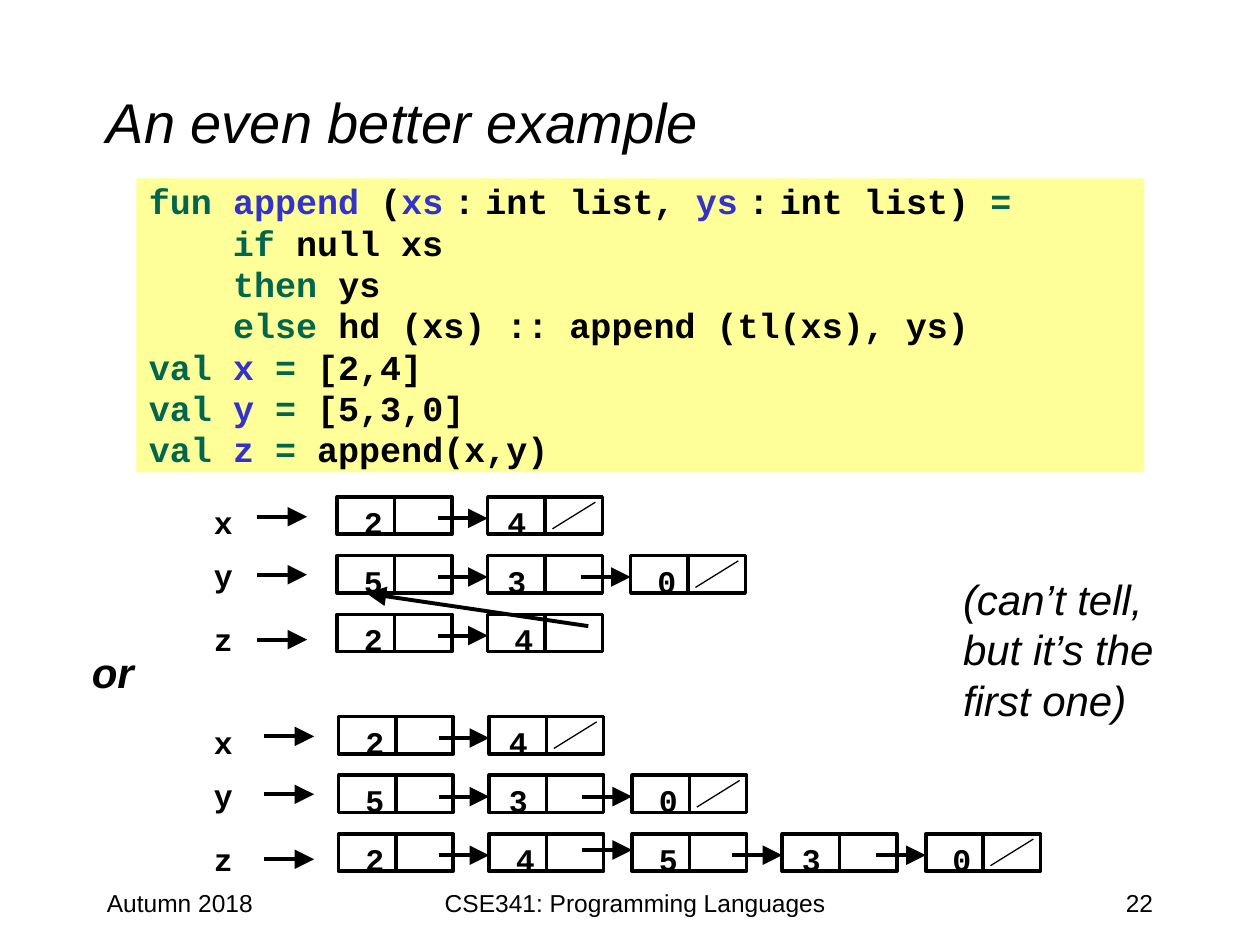
from pptx import Presentation
from pptx import util as u
from pptx.dml.color import RGBColor
from pptx.enum import shapes, text
from pptx.oxml.ns import qn
from lxml import etree

Pt = u.Pt
COLORS = {"ink": "000000", "keyword": "00664D", "binding": "3333CC", "code": "FFFF99"}

# Each code line is a list of (text, colour name); a lone space before or after ":" is small.
CODE = [
    [("fun ", "keyword"), ("append ", "binding"), ("(", "ink"), ("xs", "binding"),
     (" ", "binding"), (":", "ink"), (" ", "ink"), ("int list, ", "ink"), ("ys", "binding"),
     (" ", "binding"), (":", "ink"), (" ", "ink"), ("int list) ", "ink"), ("=", "keyword")],
    [("    if", "keyword"), (" null xs", "ink")],
    [("    ", "binding"), ("then ", "keyword"), ("ys", "ink")],
    [("    ", "binding"), ("else ", "keyword"), ("hd (xs) :: append (tl(xs), ys)", "ink")],
] + [
    [("val ", "keyword"), (name + " ", "binding"), ("= ", "keyword"), (value, "ink")]
    for name, value in (("x", "[2,4]"), ("y", "[5,3,0]"), ("z", "append(x,y)"))
]

# Text, (left, top, width, height), alignment
FOOTERS = [
    ("Autumn 2018", (54, 504, 150, 36), text.PP_ALIGN.LEFT),
    ("22", (516, 504, 150, 36), text.PP_ALIGN.RIGHT),
    ("CSE341: Programming Languages", (228, 504, 270, 36), text.PP_ALIGN.CENTER),
]

# Each diagram: cell origin, left of the pointer arrows, values of z, whether z ends in its own tail
DIAGRAMS = [
    {"left": 192.7, "top": 284, "pointer": 147, "z": "24", "z_ends": False},
    {"left": 193.5, "top": 409.5, "pointer": 151, "z": "24530", "z_ends": True},
]
CELL_W, CELL_H = 65.5, 21.3
COLUMNS = [0, 86, 167.7, 253.5, 335.5]
ROW_STEP = 33.5
ARROW_LENGTH = 28.5
LABEL_LEFT = 115.2
LABEL_DROPS = [0, 30.2, 67]
POINTER_DROPS = [11.3, 44.4, 81.5]

deck = Presentation()
deck.slide_width, deck.slide_height = Pt(720), Pt(540)
page = deck.slides.add_slide(deck.slide_layouts[6])


def color(name):
    return RGBColor.from_string(COLORS[name])


def style(span, size, font="Arial", tint="ink", bold=False, italic=False):
    span.font.size, span.font.name = Pt(size), font
    span.font.bold, span.font.italic = bold, italic
    span.font.color.rgb = color(tint)


def add_text(content, place, size, align=text.PP_ALIGN.LEFT, wrap=True, **look):
    box = page.shapes.add_textbox(*map(Pt, place))
    frame = box.text_frame
    frame.word_wrap = wrap
    frame.text = content
    for para in frame.paragraphs:
        para.alignment = align
        for span in para.runs:
            style(span, size, **look)
    return box


def add_growing_text(content, place, size, **look):
    box = add_text(content, place, size, wrap=False, **look)
    box.text_frame.auto_size = text.MSO_AUTO_SIZE.SHAPE_TO_FIT_TEXT
    return box


def add_symbol(symbol, left, top):
    box = add_growing_text(symbol, (left, top, 21.6, 18), 18, font="Courier New", bold=True)
    box.text_frame.paragraphs[0].space_before = Pt(2)


def add_line(start, end, width, arrow=False):
    line = page.shapes.add_connector(shapes.MSO_CONNECTOR.STRAIGHT, *map(Pt, start + end))
    line.line.width = Pt(width)
    line.line.color.rgb = color("ink")
    if arrow:
        outline = line._element.spPr.find(qn("a:ln"))
        etree.SubElement(outline, qn("a:tailEnd"), type="triangle", w="lg", len="lg")
    etree.SubElement(line._element.spPr, qn("a:effectLst"))
    return line


def add_arrow(start, end):
    add_line(start, end, 2.25, arrow=True)


def add_rectangle(place):
    box = page.shapes.add_shape(shapes.MSO_SHAPE.RECTANGLE, *map(Pt, place))
    box.shadow.inherit = False
    return box


def add_cons_cell(left, top):
    """Draw a two-part list cell split down the middle."""
    cell = add_rectangle((left, top, CELL_W, CELL_H))
    cell.fill.background()
    cell.line.color.rgb = color("ink")
    cell.line.width = Pt(2)
    middle = left + CELL_W / 2
    divider = add_line((middle, top), (middle, top + CELL_H), 2)
    divider.begin_connect(cell, 0)
    divider.end_connect(cell, 2)


def add_list(values, origin, top, name, ends):
    for column, value in enumerate(values):
        left = origin + COLUMNS[column]
        add_cons_cell(left, top)
        joined = name == "z" and column == 1
        add_symbol(value, left + (4.2 if column % 2 and not joined else 8.2), top)
        if column:
            drop = 9.2 if name == "z" and column == 2 else 12.2
            add_arrow((left - ARROW_LENGTH, top + drop), (left, top + drop))
    if ends:
        add_line((left + 37, top + 18.2), (left + 61.5, top + 3), 0.75)


def add_diagram(diagram):
    left, top, pointer = diagram["left"], diagram["top"], diagram["pointer"]
    lists = [("x", "24", True), ("y", "530", True), ("z", diagram["z"], diagram["z_ends"])]
    for row, (name, values, ends) in enumerate(lists):
        add_symbol(name, LABEL_LEFT, top + LABEL_DROPS[row])
        y = top + POINTER_DROPS[row]
        add_arrow((pointer, y), (pointer + ARROW_LENGTH, y))
        add_list(values, left, top + row * ROW_STEP, name, ends)


def add_code():
    panel = add_rectangle((78, 102, 576, 168))
    panel.fill.solid()
    panel.fill.fore_color.rgb = color("code")
    panel.line.fill.background()
    frame = panel.text_frame
    frame.word_wrap = True
    frame.vertical_anchor = text.MSO_ANCHOR.TOP
    for number, parts in enumerate(CODE):
        para = frame.add_paragraph() if number else frame.paragraphs[0]
        para.alignment = text.PP_ALIGN.LEFT
        para.line_spacing = 0.9
        para.space_before = Pt(2)
        properties = para._p.get_or_add_pPr()
        properties.set("marL", str(Pt(27)))
        properties.set("indent", str(-Pt(27)))
        for words, tint in parts:
            span = para.add_run()
            span.text = words
            style(span, 10 if words == " " else 20, "Courier New", tint, bold=True)


title = add_text("An even better example", (54, 24, 612, 90), 32, italic=True)
title.text_frame.vertical_anchor = text.MSO_ANCHOR.MIDDLE
for words, place, align in FOOTERS:
    add_text(words, place, 14, align)
add_code()
for diagram in DIAGRAMS:
    add_diagram(diagram)
add_arrow((336.2, 357.8), (209.5, 339.1))
add_growing_text("or", (45.4, 365.8, 38.9, 36), 24, bold=True, italic=True)
add_growing_text("(can’t tell,\nbut it’s the\nfirst one)", (543.2, 324, 131, 94.3), 24,
                 italic=True)

deck.save("out.pptx")
